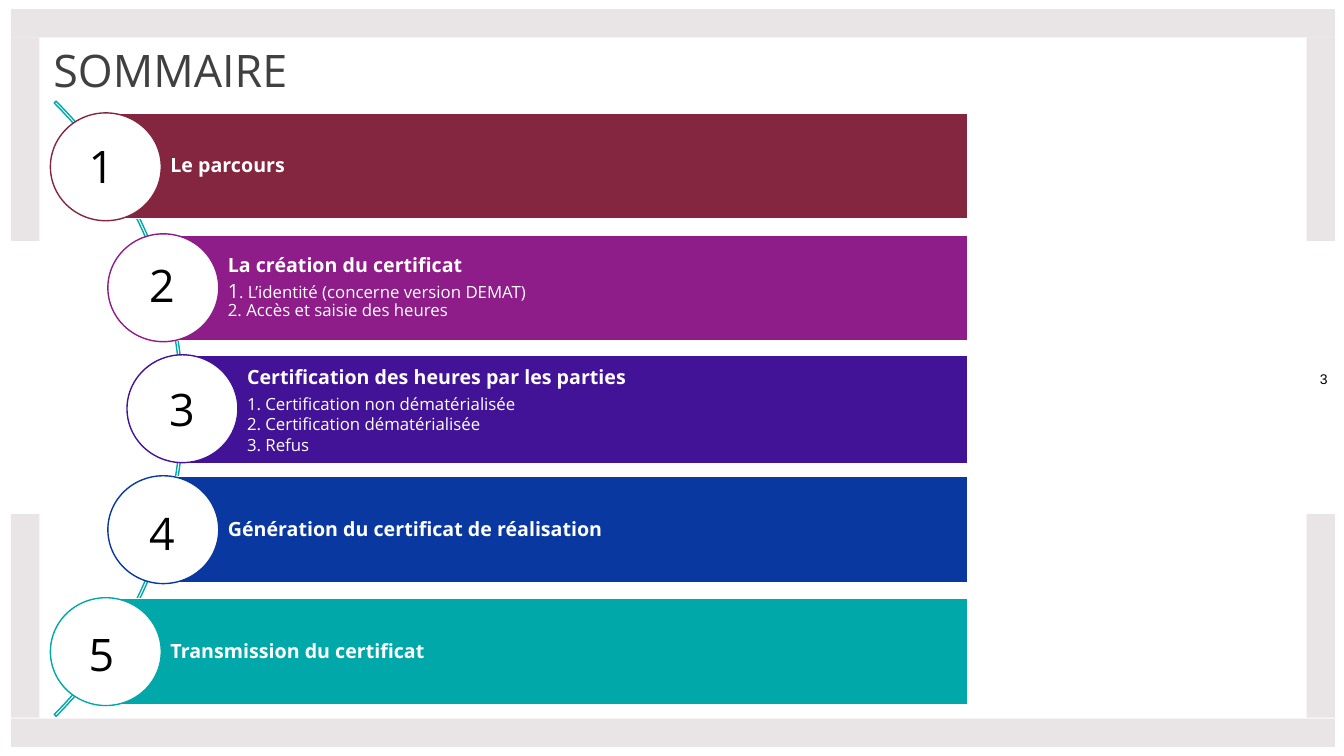
"""Build the "SOMMAIRE" slide: five numbered bars along an arc inside a broken frame."""
from dataclasses import dataclass

from pptx import Presentation
from pptx import util as u
from pptx.dml.color import RGBColor
from pptx.enum import shapes, text

EMU_PER_PX = 9144
FONT = "Open Sans"
BAR_RIGHT = 960
CIRCLE_WIDTH, CIRCLE_HEIGHT, CIRCLE_OVERHANG = 110, 107, 55
COLOURS = {
    "frame": "E9E4E5",
    "white": "FFFFFF",
    "black": "000000",
    "title": "404040",
    "burgundy": "852640",
    "purple": "8E1C89",
    "violet": "431397",
    "blue": "0939A0",
    "teal": "00A8A9",
}


@dataclass(frozen=True)
class Box:
    left: int
    top: int
    width: int
    height: int


@dataclass(frozen=True)
class Chapter:
    heading: str
    colour: str
    bar_left: int
    bar_top: int
    circle_top: int
    number_left: int
    number_top: int
    details: tuple[str, ...] = ()
    bar_height: int = 105
    insets: tuple[int, int] = (4, 4)
    detail_spacing: float = 0.9
    first_digit_size: int = 12


FRAME = [Box(11, top, 1313, 28) for top in (9, 713)] + [
    Box(left, top, 28, 202) for left in (11, 1296) for top in (37, 510)
]

CHAPTERS = [
    Chapter("Le parcours", "burgundy", 105, 112, 112, 78, 133),
    Chapter("La création du certificat", "purple", 162, 233, 232, 138, 251,
            ("1. L’identité (concerne version DEMAT)", "2. Accès et saisie des heures"),
            first_digit_size=14),
    Chapter("Certification des heures par les parties", "violet", 181, 352, 352, 158, 374,
            ("1. Certification non dématérialisée", "2. Certification dématérialisée", "3. Refus"),
            bar_height=108, insets=(5, 1), detail_spacing=1.0),
    Chapter("Génération du certificat de réalisation", "blue", 162, 473, 472, 138, 497),
    Chapter("Transmission du certificat", "teal", 105, 594, 593, 78, 617),
]


def px(value: int) -> u.Emu:
    """Turn pixels into EMU."""
    return u.Emu(value * EMU_PER_PX)


def bounds(box: Box) -> tuple[u.Emu, ...]:
    """Give the left, top, width and height of a box in EMU."""
    return px(box.left), px(box.top), px(box.width), px(box.height)


def rgb(name: str) -> RGBColor:
    """Look up a named colour."""
    return RGBColor.from_string(COLOURS[name])


def style(font, size: int, colour: str, bold: bool = False, name: str = FONT) -> None:
    """Set the look of a font."""
    font.name, font.size, font.bold = name, u.Pt(size), bold
    font.color.rgb = rgb(colour)


def add_preset(slide, kind, box: Box, fill: str | None, line: str | None):
    """Add a preset shape without a shadow."""
    shape = slide.shapes.add_shape(kind, *bounds(box))
    shape.shadow.inherit = False
    if fill:
        shape.fill.solid()
        shape.fill.fore_color.rgb = rgb(fill)
    else:
        shape.fill.background()
    if line:
        shape.line.color.rgb = rgb(line)
        shape.line.width = u.Pt(1)
    else:
        shape.line.fill.background()
    return shape


def add_label(slide, box: Box, wording: str, size: int, name: str = FONT):
    """Add a black one-line text box and return its frame."""
    frame = slide.shapes.add_textbox(*bounds(box)).text_frame
    frame.word_wrap = True
    frame.text = wording
    style(frame.paragraphs[0].runs[0].font, size, "black", name=name)
    return frame


def fill_bar(frame, chapter: Chapter) -> None:
    """Write the heading and details of a chapter in its bar."""
    frame.word_wrap = True
    frame.vertical_anchor = text.MSO_ANCHOR.MIDDLE
    frame.margin_left = px(64)
    frame.margin_right = px(chapter.insets[1])
    frame.margin_top, frame.margin_bottom = map(px, chapter.insets)
    heading = frame.paragraphs[0]
    heading.text = chapter.heading
    heading.alignment = text.PP_ALIGN.LEFT
    heading.line_spacing = 0.9
    heading.space_after = u.Pt(3.5)
    style(heading.runs[0].font, 14, "white", bold=True)
    for index, detail in enumerate(chapter.details):
        paragraph = frame.add_paragraph()
        paragraph.alignment = text.PP_ALIGN.LEFT
        paragraph.line_spacing = chapter.detail_spacing
        digit_size = 12 if index else chapter.first_digit_size
        for wording, size in ((detail[0], digit_size), (detail[1:], 12)):
            run = paragraph.add_run()
            run.text = wording
            style(run.font, size, "white")


def add_chapter(slide, chapter: Chapter) -> None:
    """Draw the bar and the circle of a chapter."""
    bar = Box(chapter.bar_left, chapter.bar_top, BAR_RIGHT - chapter.bar_left, chapter.bar_height)
    shape = add_preset(slide, shapes.MSO_SHAPE.RECTANGLE, bar, chapter.colour, "white")
    fill_bar(shape.text_frame, chapter)
    circle = Box(chapter.bar_left - CIRCLE_OVERHANG, chapter.circle_top, CIRCLE_WIDTH, CIRCLE_HEIGHT)
    add_preset(slide, shapes.MSO_SHAPE.OVAL, circle, "white", chapter.colour)


def set_title(slide) -> None:
    """Move and format the title placeholder."""
    title = slide.shapes.title
    title.left, title.top, title.width, title.height = bounds(Box(43, 37, 1166, 64))
    frame = title.text_frame
    frame.text = "SOMMAIRE"
    frame.vertical_anchor = text.MSO_ANCHOR.TOP
    frame.auto_size = text.MSO_AUTO_SIZE.NONE
    frame.paragraphs[0].alignment = text.PP_ALIGN.LEFT
    style(frame.paragraphs[0].runs[0].font, 32, "title")


def add_page_number(slide) -> None:
    """Write the page number at the right edge."""
    frame = add_label(slide, Box(1296, 251, 34, 249), "3", 10, "Arial")
    frame.margin_left = frame.margin_right = frame.margin_top = frame.margin_bottom = 0
    frame.vertical_anchor = text.MSO_ANCHOR.MIDDLE
    frame.paragraphs[0].alignment = text.PP_ALIGN.CENTER


def main() -> None:
    """Build and save the presentation."""
    presentation = Presentation()
    presentation.slide_width, presentation.slide_height = px(1333), px(750)
    slide = presentation.slides.add_slide(presentation.slide_layouts.get_by_name("Title Only"))
    set_title(slide)
    for box in FRAME:
        add_preset(slide, shapes.MSO_SHAPE.RECTANGLE, box, "frame", None)
    add_page_number(slide)
    arc = add_preset(slide, shapes.MSO_SHAPE.BLOCK_ARC, Box(-681, -26, 863, 863), None, "teal")
    for index, value in enumerate((189, 27, 0.003)):
        arc.adjustments[index] = value
    for chapter in CHAPTERS:
        add_chapter(slide, chapter)
    for number, chapter in enumerate(CHAPTERS, start=1):
        add_label(slide, Box(chapter.number_left, chapter.number_top, 71, 64), str(number), 32)
    presentation.save("out.pptx")


if __name__ == "__main__":
    main()
